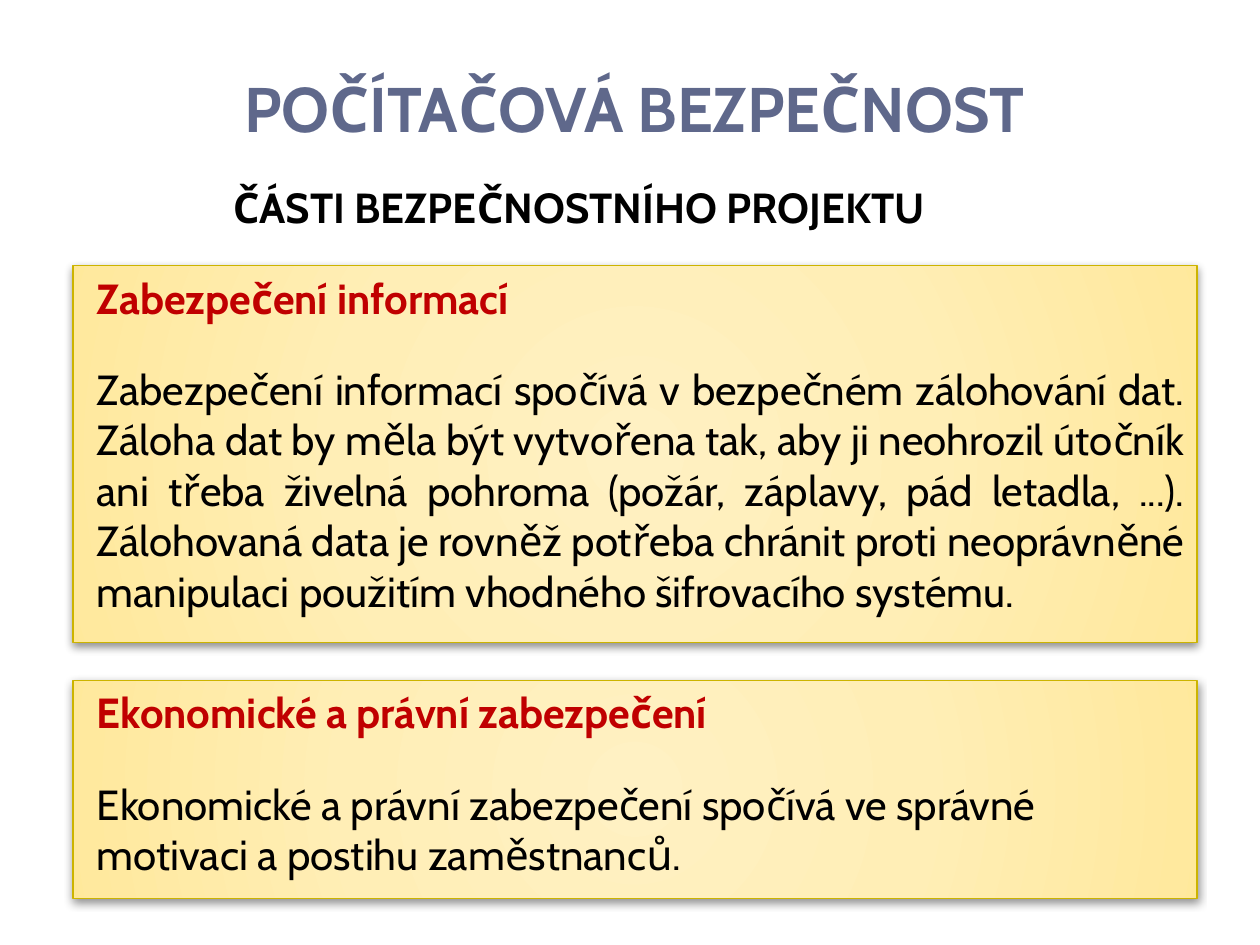
from lxml.etree import fromstring
from pptx import Presentation
from pptx.dml.color import RGBColor
from pptx.enum.shapes import MSO_SHAPE as SHAPE
from pptx.enum.text import MSO_ANCHOR as ANCHOR, PP_ALIGN as ALIGN
from pptx.oxml.ns import nsdecls
from pptx.util import Inches, Pt

FONT = "Cabin"
TITLE = "POČÍTAČOVÁ BEZPEČNOST"
SUBTITLE = "ČÁSTI BEZPEČNOSTNÍHO PROJEKTU"
# heading, body, body alignment, top, height
PANELS = [
    ("Zabezpečení informací",
     "Zabezpečení informací spočívá v bezpečném zálohování dat. "
     "Záloha dat by měla být vytvořena tak, aby ji neohrozil útočník "
     "ani třeba živelná pohroma (požár, záplavy, pád letadla, ...). "
     "Zálohovaná data je rovněž potřeba chránit proti neoprávněné "
     "manipulaci použitím vhodného šifrovacího systému.",
     ALIGN.JUSTIFY, 2.11, 2.99),
    ("Ekonomické a právní zabezpečení",
     "Ekonomické a právní zabezpečení spočívá ve správné "
     "motivaci a postihu zaměstnanců.",
     ALIGN.LEFT, 5.4, 1.73),
]
PANEL_LEFT, PANEL_WIDTH = 0.58, 8.92
INDENT = 0.09
GRADIENT = [(0, "FFF1C3"), (50, "FFEEB6"), (97, "FFE99E"), (100, "FFE898")]


def color(value):
    return RGBColor.from_string(value)


def write(paragraph, text, size, font_color, bold=False, align=ALIGN.LEFT,
          before=0, indent=0):
    paragraph.alignment = align
    paragraph.space_before = Pt(before)
    properties = paragraph._p.get_or_add_pPr()
    properties.set("marL", str(Inches(indent)))
    properties.set("indent", "0")
    run = paragraph.add_run()
    run.text = text
    run.font.name = FONT
    run.font.size = Pt(size)
    run.font.bold = bold
    run.font.color.rgb = color(font_color)


def add_text_box(slide, left, top, width, height, anchor=ANCHOR.TOP):
    box = slide.shapes.add_textbox(*map(Inches, (left, top, width, height)))
    box.text_frame.word_wrap = True
    box.text_frame.vertical_anchor = anchor
    return box.text_frame.paragraphs[0]


def style_panel(shape):
    shape.line.color.rgb = color("CCB400")
    shape.line.width = Pt(0.75)
    shape.shadow.inherit = False

    # Radial gradient, lightest in the centre
    stops = "".join(f'<a:gs pos="{position * 1000}"><a:srgbClr val="{value}"/></a:gs>'
                    for position, value in GRADIENT)
    fill = fromstring(
        f'<a:gradFill {nsdecls("a")} rotWithShape="1"><a:gsLst>{stops}</a:gsLst>'
        '<a:path path="circle"><a:fillToRect l="50000" t="50000" r="50000" b="50000"/>'
        '</a:path></a:gradFill>')
    properties = shape._element.spPr
    properties.prstGeom.addnext(fill)

    # Soft shadow below
    shadow = fromstring(
        f'<a:outerShdw {nsdecls("a")} blurRad="{Pt(5)}" dist="{Pt(2)}" dir="5400000" '
        'rotWithShape="0"><a:srgbClr val="000000"><a:alpha val="43000"/></a:srgbClr>'
        '</a:outerShdw>')
    properties.find("{*}effectLst").append(shadow)


def add_panel(slide, heading, body, align, top, height):
    panel = slide.shapes.add_shape(
        SHAPE.RECTANGLE, *map(Inches, (PANEL_LEFT, top, PANEL_WIDTH, height)))
    style_panel(panel)
    frame = panel.text_frame
    frame.word_wrap = True
    frame.vertical_anchor = ANCHOR.TOP
    write(frame.paragraphs[0], heading, 24, "C00000", bold=True,
          before=6, indent=INDENT)
    write(frame.add_paragraph(), body, 24, "000000", align=align,
          before=23.5, indent=INDENT)


def main():
    presentation = Presentation()
    presentation.slide_width, presentation.slide_height = Inches(10), Inches(7.5)
    slide = presentation.slides.add_slide(presentation.slide_layouts[6])

    # Title and subtitle
    title = add_text_box(slide, 0.43, 0.52, 9.21, 0.68, ANCHOR.BOTTOM)
    write(title, TITLE, 36, "5F688B", bold=True, align=ALIGN.CENTER)
    title.line_spacing = Pt(20)
    subtitle = add_text_box(slide, 1.66, 1.39, 6.76, 0.5)
    write(subtitle, SUBTITLE, 24, "000000", bold=True, indent=INDENT)

    # Panels
    for panel in PANELS:
        add_panel(slide, *panel)

    presentation.save("out.pptx")


if __name__ == "__main__":
    main()
